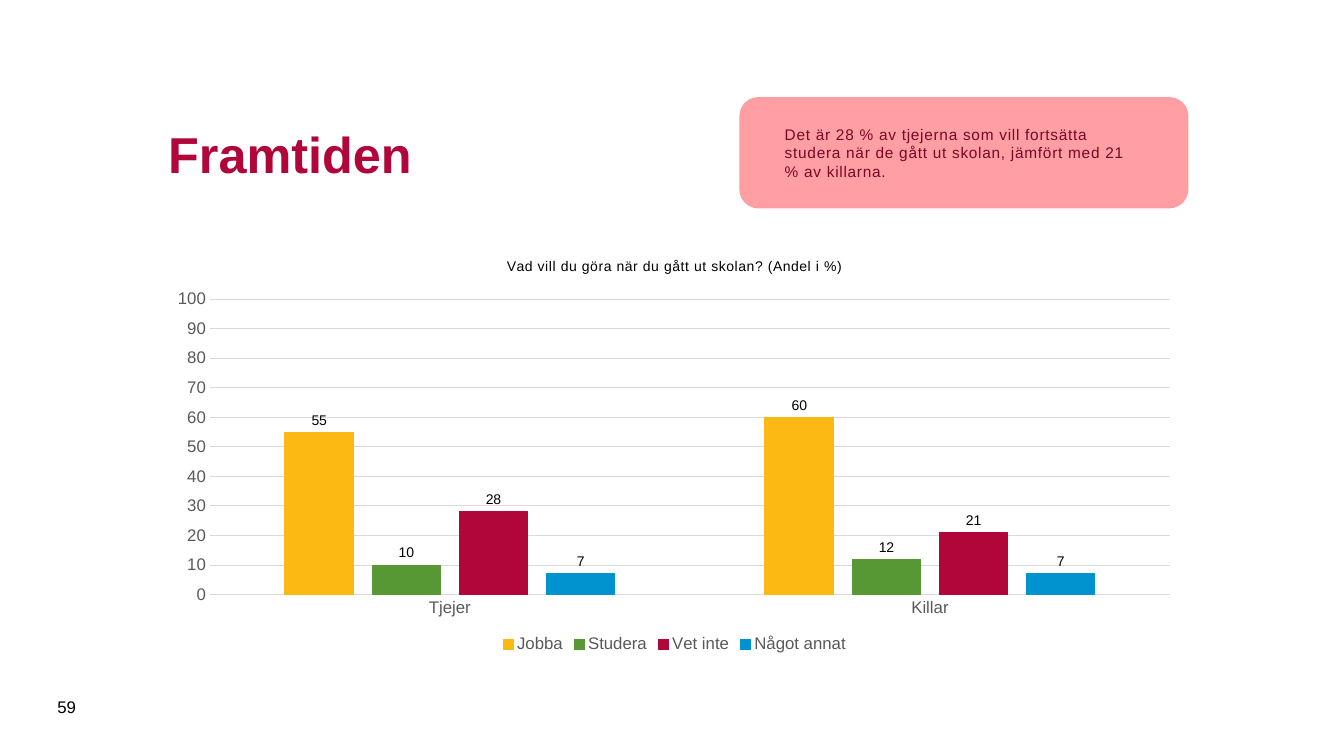
import pptx
import pptx.chart.data
import pptx.dml.color
import pptx.enum.chart
import pptx.enum.shapes
import pptx.enum.text
import pptx.oxml
import pptx.oxml.ns
import pptx.util

Inches = pptx.util.Inches
Pt = pptx.util.Pt
COLOURS = {
    "crimson": "B1063A", "wine": "790726", "pink": "FF9DA2", "black": "000000",
    "grey": "595959", "grid": "D9D9D9", "Jobba": "FDB913", "Studera": "579835",
    "Vet inte": "B1063A", "Något annat": "0093D0",
}
ANSWERS = {"Jobba": (55, 60), "Studera": (10, 12), "Vet inte": (28, 21), "Något annat": (7, 7)}
NUMBER_FORMAT = "#,##0;#,##0"
PLOT_LAYOUT = {"x": 0.05, "y": 0.14, "w": 0.93, "h": 0.71}


def colour(name):
    """Return the named colour."""
    return pptx.dml.color.RGBColor.from_string(COLOURS[name])


def style_font(font, size, colour_name, bold=False):
    """Apply size, colour and weight in Arial."""
    for key, value in {"name": "Arial", "size": Pt(size), "bold": bold}.items():
        setattr(font, key, value)
    font.color.rgb = colour(colour_name)


def style_line(line, colour_name, width=0.75):
    """Give a line its colour and width."""
    line.color.rgb = colour(colour_name)
    line.width = Pt(width)


def write_text(frame, text, size, colour_name, bold=False, spacing=0):
    """Write one left-aligned, vertically centred paragraph."""
    frame.word_wrap = True
    frame.vertical_anchor = pptx.enum.text.MSO_ANCHOR.MIDDLE
    para = frame.paragraphs[0]
    para.alignment = pptx.enum.text.PP_ALIGN.LEFT
    write_span(para, text, size, colour_name, bold, spacing)


def write_span(para, text, size, colour_name, bold=False, spacing=0):
    """Add a styled span with letter spacing in points."""
    span = para.add_run()
    span.text = text
    style_font(span.font, size, colour_name, bold)
    if spacing:
        span._r.get_or_add_rPr().set("spc", str(int(spacing * 100)))


def add_label(page, box, text, size, colour_name, bold=False):
    """Add a text box in the given box."""
    label = page.shapes.add_textbox(*map(Inches, box))
    write_text(label.text_frame, text, size, colour_name, bold)


def add_callout(page, box, text):
    """Add the rounded pink callout."""
    callout = page.shapes.add_shape(
        pptx.enum.shapes.MSO_SHAPE.ROUNDED_RECTANGLE, *map(Inches, box))
    callout.shadow.inherit = False
    callout.fill.solid()
    callout.fill.fore_color.rgb = colour("pink")
    shade = next(callout._element.spPr.iter(pptx.oxml.ns.qn("a:srgbClr")))
    shade.append(pptx.oxml.parse_xml(
        f'<a:alpha {pptx.oxml.ns.nsdecls("a")} val="98000"/>'))
    style_line(callout.line, "pink", 1)
    frame = callout.text_frame
    for side, inset in {"left": 0.39, "top": 0.2, "right": 0.39, "bottom": 0.2}.items():
        setattr(frame, f"margin_{side}", Inches(inset))
    write_text(frame, text, 11, "wine", spacing=0.5)


def place_plot(chart):
    """Fix the inner plot area inside the chart."""
    area = chart._chartSpace.chart.plotArea
    for layout in area.findall(pptx.oxml.ns.qn("c:layout")):
        area.remove(layout)
    modes = '<c:layoutTarget val="inner"/><c:xMode val="edge"/><c:yMode val="edge"/>'
    sizes = "".join(f'<c:{key} val="{value}"/>' for key, value in PLOT_LAYOUT.items())
    area.insert(0, pptx.oxml.parse_xml(
        f'<c:layout {pptx.oxml.ns.nsdecls("c")}><c:manualLayout>'
        f'{modes}{sizes}</c:manualLayout></c:layout>'))


def style_axes(chart):
    """Style both axes and the gridlines."""
    for axis in (chart.category_axis, chart.value_axis):
        axis.major_tick_mark = axis.minor_tick_mark = pptx.enum.chart.XL_TICK_MARK.NONE
        style_font(axis.tick_labels.font, 12, "grey")
    style_line(chart.category_axis.format.line, "grid")
    values = chart.value_axis
    settings = {"minimum_scale": 0, "maximum_scale": 100, "major_unit": 10,
                "has_major_gridlines": True}
    for key, value in settings.items():
        setattr(values, key, value)
    values.format.line.fill.background()
    style_line(values.major_gridlines.format.line, "grid")
    values.tick_labels.number_format = NUMBER_FORMAT
    values.tick_labels.number_format_is_linked = False


def style_series(series):
    """Colour one answer and label its columns."""
    series.format.fill.solid()
    series.format.fill.fore_color.rgb = colour(series.name)
    style_line(series.format.line, series.name)
    labels = series.data_labels
    settings = {"show_value": True, "number_format": NUMBER_FORMAT,
                "number_format_is_linked": False,
                "position": pptx.enum.chart.XL_LABEL_POSITION.OUTSIDE_END}
    for key, value in settings.items():
        setattr(labels, key, value)
    style_font(labels.font, 10, "black")


def add_answer_chart(page, box, title):
    """Add the clustered column chart of answers."""
    data = pptx.chart.data.CategoryChartData(number_format=NUMBER_FORMAT)
    data.categories = ("Tjejer", "Killar")
    for name, values in ANSWERS.items():
        data.add_series(name, values)
    chart = page.shapes.add_chart(
        pptx.enum.chart.XL_CHART_TYPE.COLUMN_CLUSTERED, *map(Inches, box), data).chart
    style_font(chart.font, 10, "black")
    chart.has_title = True
    write_span(chart.chart_title.text_frame.paragraphs[0], title, 10, "black", spacing=0.5)
    chart.has_legend = True
    chart.legend.position = pptx.enum.chart.XL_LEGEND_POSITION.BOTTOM
    chart.legend.include_in_layout = False
    style_font(chart.legend.font, 12, "grey")
    plot = chart.plots[0]
    for key, value in {"gap_width": 219, "overlap": -27, "vary_by_categories": False}.items():
        setattr(plot, key, value)
    style_axes(chart)
    for series in plot.series:
        style_series(series)
    place_plot(chart)


def main():
    """Build and save the slide."""
    deck = pptx.Presentation()
    deck.slide_width, deck.slide_height = Inches(13.33), Inches(7.5)
    page = deck.slides.add_slide(deck.slide_layouts[6])
    add_label(page, (1.57, 0.81, 10.24, 1.42), "Framtiden", 36, "crimson", True)
    add_label(page, (0.47, 6.81, 0.57, 0.4), "59", 12, "black")
    add_answer_chart(page, (1.57, 2.39, 10.24, 4.13),
                     "Vad vill du göra när du gått ut skolan? (Andel i %)")
    add_callout(page, (7.34, 0.97, 4.44, 1.09),
                "Det är 28 % av tjejerna som vill fortsätta studera när de gått ut skolan, "
                "jämfört med 21 % av killarna.")
    deck.save("out.pptx")


if __name__ == "__main__":
    main()
